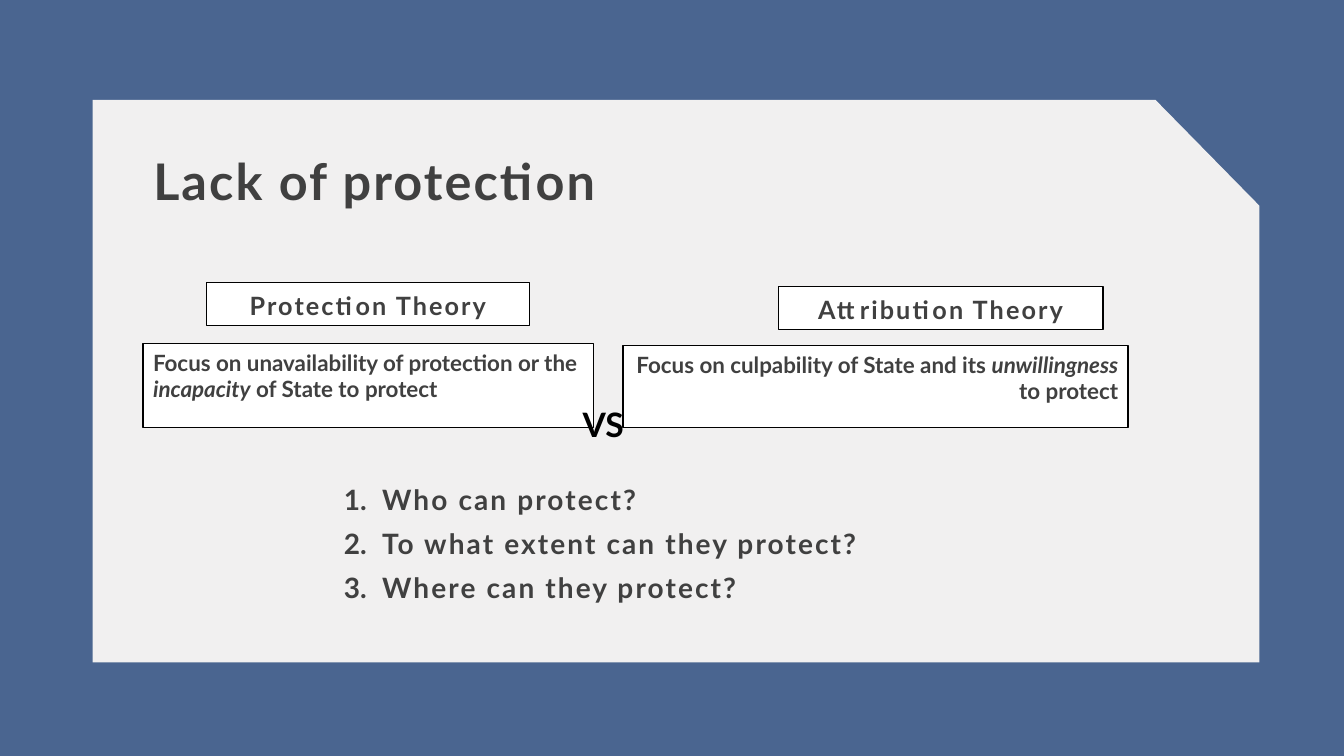
"""Build the slide that compares two theories of lack of protection."""
from dataclasses import dataclass

from lxml.etree import SubElement
from pptx import Presentation
from pptx.dml.color import RGBColor
from pptx.enum.text import MSO_ANCHOR, MSO_AUTO_SIZE, PP_ALIGN
from pptx.oxml.ns import qn
from pptx.shapes.base import BaseShape
from pptx.slide import Slide
from pptx.util import Inches, Pt

BLUE = RGBColor(0x4A, 0x65, 0x90)
PALE = RGBColor(0xF1, 0xF0, 0xF0)
DARK = RGBColor(0x40, 0x40, 0x40)
WHITE = RGBColor(0xFF, 0xFF, 0xFF)
BLACK = RGBColor(0x00, 0x00, 0x00)
FONT = "Lato"
PANEL_CORNERS = [(0.92, 0.99), (11.46, 0.99), (12.49, 2.04), (12.49, 6.57), (0.92, 6.57)]
QUESTIONS = "Who can protect?\nTo what extent can they protect?\nWhere can they protect?"


@dataclass(frozen=True)
class Area:
    """Position and size in inches."""
    left: float
    top: float
    width: float
    height: float


@dataclass(frozen=True)
class Theory:
    """A theory with its heading and its focus."""
    name: str
    name_area: Area
    focus: str
    focus_area: Area
    focus_align: PP_ALIGN


THEORIES = [
    Theory("Protection Theory", Area(2.05, 2.8, 3.2, 0.43),
           "Focus on unavailability of protection or the *incapacity* of State to protect",
           Area(1.42, 3.41, 4.47, 0.83), PP_ALIGN.LEFT),
    Theory("Attribution Theory", Area(7.72, 2.84, 3.22, 0.43),
           "Focus on culpability of State and its *unwillingness *to protect",
           Area(6.18, 3.43, 5.01, 0.81), PP_ALIGN.RIGHT),
]


def place(shape: BaseShape, area: Area) -> None:
    """Move and size a shape."""
    shape.left, shape.top = Inches(area.left), Inches(area.top)
    shape.width, shape.height = Inches(area.width), Inches(area.height)


def write(shape: BaseShape, text: str, *, size: float, color: RGBColor = DARK,
          align: PP_ALIGN = PP_ALIGN.LEFT, anchor: MSO_ANCHOR = MSO_ANCHOR.TOP,
          line_spacing: float = 1.0, space_before: float = 0,
          tracking: float = 0, numbered: bool = False) -> None:
    """Write bold paragraphs, one a line, with italics between asterisks."""
    frame = shape.text_frame
    frame.word_wrap = True
    frame.auto_size = MSO_AUTO_SIZE.NONE
    frame.vertical_anchor = anchor
    for index, line in enumerate(text.split("\n")):
        paragraph = frame.add_paragraph() if index else frame.paragraphs[0]
        paragraph.alignment = align
        paragraph.line_spacing = line_spacing
        paragraph.space_before = Pt(space_before)
        if numbered:
            properties = paragraph._p.get_or_add_pPr()
            properties.set("marL", str(Inches(0.38)))
            properties.set("indent", str(Inches(-0.38)))
            SubElement(properties, qn("a:buAutoNum"), type="arabicPeriod")
        for part, words in enumerate(line.split("*")):
            run = paragraph.add_run()
            run.text = words
            font = run.font
            font.name, font.size, font.bold = FONT, Pt(size), True
            font.italic = part % 2 == 1
            font.color.rgb = color
            run._r.get_or_add_rPr().set("spc", str(round(tracking * 100)))


def add_text_box(slide: Slide, area: Area, framed: bool = False) -> BaseShape:
    """Add a text box, white with a black outline when framed."""
    shape = slide.shapes.add_textbox(0, 0, 0, 0)
    place(shape, area)
    if framed:
        shape.fill.solid()
        shape.fill.fore_color.rgb = WHITE
        shape.line.color.rgb = BLACK
        shape.line.width = Pt(1)
    return shape


def add_panel(slide: Slide) -> None:
    """Add the cut-corner panel behind everything else."""
    corners = [(Inches(x), Inches(y)) for x, y in PANEL_CORNERS]
    builder = slide.shapes.build_freeform(*corners[0])
    builder.add_line_segments(corners[1:], close=True)
    panel = builder.convert_to_shape()
    panel.shadow.inherit = False
    panel.fill.solid()
    panel.fill.fore_color.rgb = PALE
    panel.line.fill.background()
    slide.shapes._spTree.insert(2, panel._element)


def add_theory(slide: Slide, theory: Theory) -> None:
    """Add the heading and focus boxes of a theory."""
    write(add_text_box(slide, theory.name_area, framed=True), theory.name, size=18,
          align=PP_ALIGN.CENTER, anchor=MSO_ANCHOR.BOTTOM, line_spacing=0.9,
          space_before=10, tracking=1.5)
    write(add_text_box(slide, theory.focus_area, framed=True), theory.focus, size=16,
          align=theory.focus_align, space_before=10)


def main() -> None:
    """Build and save the presentation."""
    presentation = Presentation()
    presentation.slide_width, presentation.slide_height = Inches(13.33), Inches(7.5)
    slide = presentation.slides.add_slide(presentation.slide_layouts[1])
    slide.background.fill.solid()
    slide.background.fill.fore_color.rgb = BLUE
    add_panel(slide)

    title, questions = slide.shapes.title, slide.placeholders[1]
    place(title, Area(1.42, 1.51, 6.88, 1.04))
    write(title, "Lack of protection", size=36, line_spacing=0.9, tracking=1.5)
    for theory in THEORIES:
        add_theory(slide, theory)
    place(questions, Area(3.31, 4.74, 6.71, 1.31))
    write(questions, QUESTIONS, size=20, anchor=MSO_ANCHOR.BOTTOM, line_spacing=0.9,
          space_before=10, tracking=1.5, numbered=True)
    write(add_text_box(slide, Area(5.68, 3.96, 0.74, 0.5)), "VS", size=24, color=BLACK)
    presentation.save("out.pptx")


if __name__ == "__main__":
    main()
